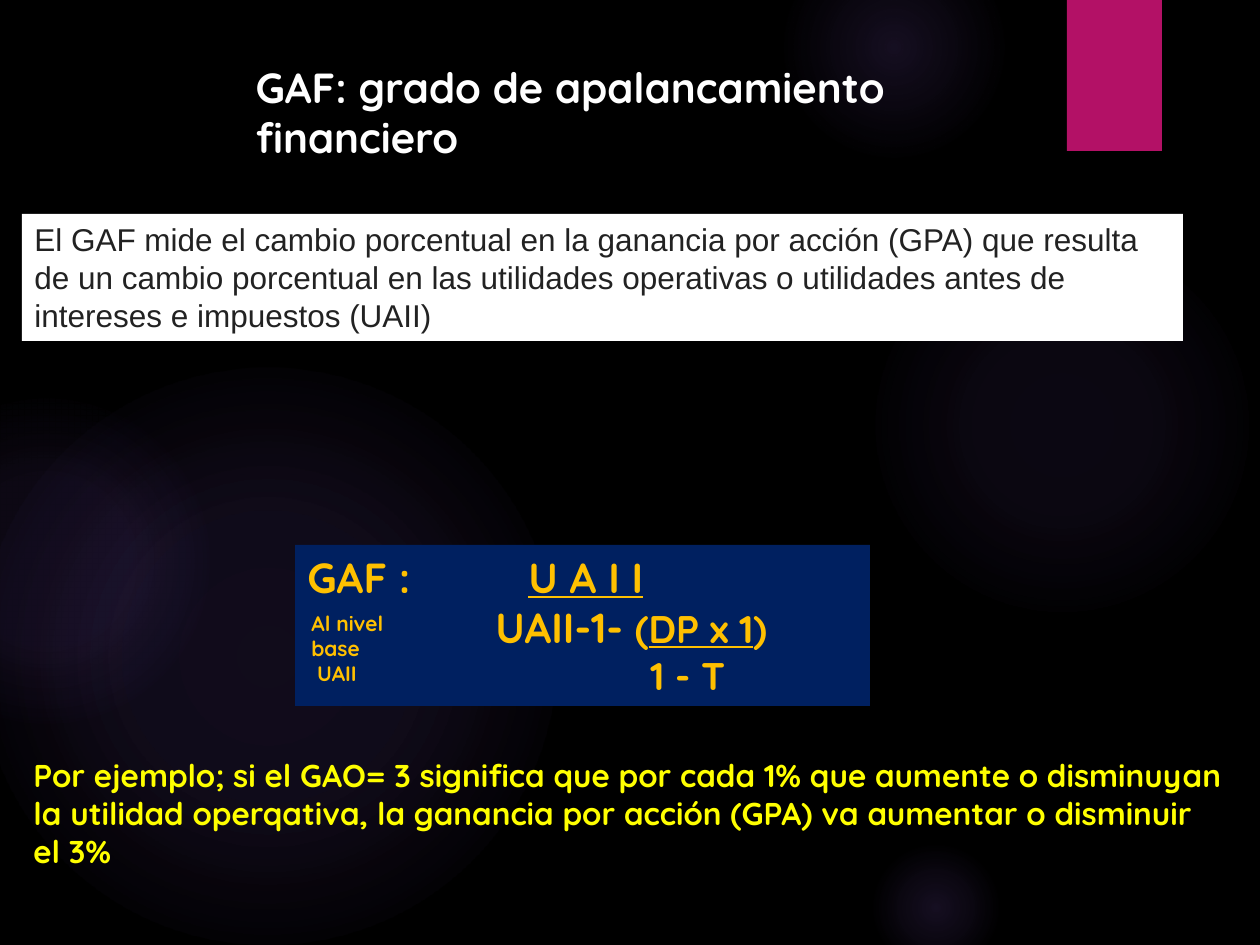
from dataclasses import dataclass

import lxml.etree
import pptx
import pptx.dml.color
import pptx.enum.shapes
import pptx.enum.text
import pptx.oxml.ns
import pptx.util

EMU_PER_PX = 914400 / 126
HEADING_FONT = "Quicksand"
GOLD = "FFC000"
GLOW_COLOR = "9B6BF2"
DRAWING_NS = pptx.oxml.ns.nsdecls("a")


@dataclass
class Box:
    left: int
    top: int
    width: int
    height: int


@dataclass
class Glow:
    """Round light; stops are (position %, opacity %)."""
    left: int
    top: int
    size: int
    stops: tuple


@dataclass
class TextStyle:
    size: int
    color: str
    font: str = HEADING_FONT
    bold: bool = True


GLOWS = [
    Glow(868, 231, 388, ((0, 7), (36, 6), (69, 0))),
    Glow(784, -63, 220, ((0, 14), (36, 7), (73, 0))),
    Glow(868, 840, 136, ((0, 14), (36, 7), (66, 0))),
    Glow(-21, 368, 577, ((0, 11), (36, 10), (75, 0))),
    Glow(-116, 399, 325, ((0, 8), (36, 8), (72, 0))),
]


def px(length: int) -> int:
    return round(length * EMU_PER_PX)


def rgb(color: str):
    return pptx.dml.color.RGBColor.from_string(color)


def place(box: Box) -> tuple:
    return px(box.left), px(box.top), px(box.width), px(box.height)


def add_panel(slide, box: Box, color: str):
    panel = slide.shapes.add_shape(pptx.enum.shapes.MSO_SHAPE.RECTANGLE, *place(box))
    panel.shadow.inherit = False
    panel.fill.solid()
    panel.fill.fore_color.rgb = rgb(color)
    panel.line.fill.background()
    return panel


def add_glow(slide, glow: Glow) -> None:
    box = Box(glow.left, glow.top, glow.size, glow.size)
    light = slide.shapes.add_shape(pptx.enum.shapes.MSO_SHAPE.OVAL, *place(box))
    light.shadow.inherit = False
    light.line.fill.background()
    light.fill.background()
    stops = "".join(
        f'<a:gs pos="{position * 1000}"><a:srgbClr val="{GLOW_COLOR}">'
        f'<a:alpha val="{opacity * 1000}"/></a:srgbClr></a:gs>'
        for position, opacity in glow.stops
    )
    gradient = lxml.etree.fromstring(
        f'<a:gradFill {DRAWING_NS}><a:gsLst>{stops}</a:gsLst><a:path path="circle">'
        '<a:fillToRect l="50000" t="50000" r="50000" b="50000"/></a:path></a:gradFill>'
    )
    properties = light._element.spPr
    properties.replace(properties.find(pptx.oxml.ns.qn("a:noFill")), gradient)


def style_paragraph(paragraph, style: TextStyle) -> None:
    paragraph.alignment = pptx.enum.text.PP_ALIGN.LEFT
    font = paragraph.font
    font.name = style.font
    font.size = pptx.util.Pt(style.size)
    font.bold = style.bold
    font.color.rgb = rgb(style.color)


def write(shape, lines: list, style: TextStyle) -> None:
    frame = shape.text_frame
    frame.word_wrap = True
    frame.auto_size = pptx.enum.text.MSO_AUTO_SIZE.NONE
    frame.vertical_anchor = pptx.enum.text.MSO_ANCHOR.TOP
    frame.text = "\n".join(lines)
    for paragraph in frame.paragraphs:
        style_paragraph(paragraph, style)


def add_run(paragraph, text: str, size: int = 0, underline: bool = False) -> None:
    run = paragraph.add_run()
    run.text = text
    if size:
        run.font.size = pptx.util.Pt(size)
    if underline:
        run.font.underline = True


def set_tabs(paragraph, positions: list) -> None:
    tabs = "".join(f'<a:tab pos="{px(position)}" algn="l"/>' for position in positions)
    tab_list = lxml.etree.fromstring(f"<a:tabLst {DRAWING_NS}>{tabs}</a:tabLst>")
    properties = paragraph._p.get_or_add_pPr()
    properties.insert_element_before(tab_list, "a:defRPr", "a:extLst")


def add_formula(slide, box: Box) -> None:
    panel = add_panel(slide, box, "002060")
    write(panel, ["", "", ""], TextStyle(24, GOLD))
    numerator, denominator, divisor = panel.text_frame.paragraphs

    # The tabs mark the start of the fraction bar, the numerator and the bar's end.
    set_tabs(numerator, [184, 221, 417])
    add_run(numerator, "GAF :\t")
    add_run(numerator, "\tU A I I\t", underline=True)

    denominator._p.get_or_add_pPr().set("marL", str(px(188)))
    add_run(denominator, "UAII-1- ")
    add_run(denominator, "(", 22)
    add_run(denominator, "DP x 1", 22, underline=True)
    add_run(denominator, ")", 22)

    divisor._p.get_or_add_pPr().set("marL", str(px(343)))
    divisor.font.size = pptx.util.Pt(22)
    add_run(divisor, "1 - T")


def main() -> None:
    presentation = pptx.Presentation()
    presentation.slide_width = pptx.util.Inches(10)
    presentation.slide_height = pptx.util.Inches(7.5)
    slide = presentation.slides.add_slide(presentation.slide_layouts[5])
    slide.background.fill.solid()
    slide.background.fill.fore_color.rgb = rgb("000000")

    for glow in GLOWS:
        add_glow(slide, glow)
    add_panel(slide, Box(1067, 0, 95, 151), "B31166")

    title = slide.shapes.title
    title.left, title.top, title.width, title.height = place(Box(243, 55, 813, 115))
    write(title, ["GAF: grado de apalancamiento financiero"], TextStyle(24, "FFFFFF"))
    slide.shapes._spTree.append(title._element)  # in front of the glows

    example = slide.shapes.add_textbox(*place(Box(21, 750, 1213, 126)))
    write(example, [
        "Por ejemplo; si el GAO= 3 significa que por cada 1% que aumente o disminuyan "
        "la utilidad operqativa, la ganancia por acción (GPA) va aumentar o disminuir el 3%"
    ], TextStyle(18, "FFFF00"))

    definition = add_panel(slide, Box(22, 214, 1161, 127), "FFFFFF")
    write(definition, [
        "El GAF mide el cambio porcentual en la ganancia por acción (GPA) que resulta "
        "de un cambio porcentual en las utilidades operativas o utilidades antes de "
        "intereses e impuestos (UAII)"
    ], TextStyle(18, "222222", "Arial", False))

    add_formula(slide, Box(295, 545, 575, 161))
    base_level = slide.shapes.add_textbox(*place(Box(299, 604, 145, 90)))
    write(base_level, ["Al nivel base", " UAII"], TextStyle(12, GOLD))

    presentation.save("out.pptx")


if __name__ == "__main__":
    main()
